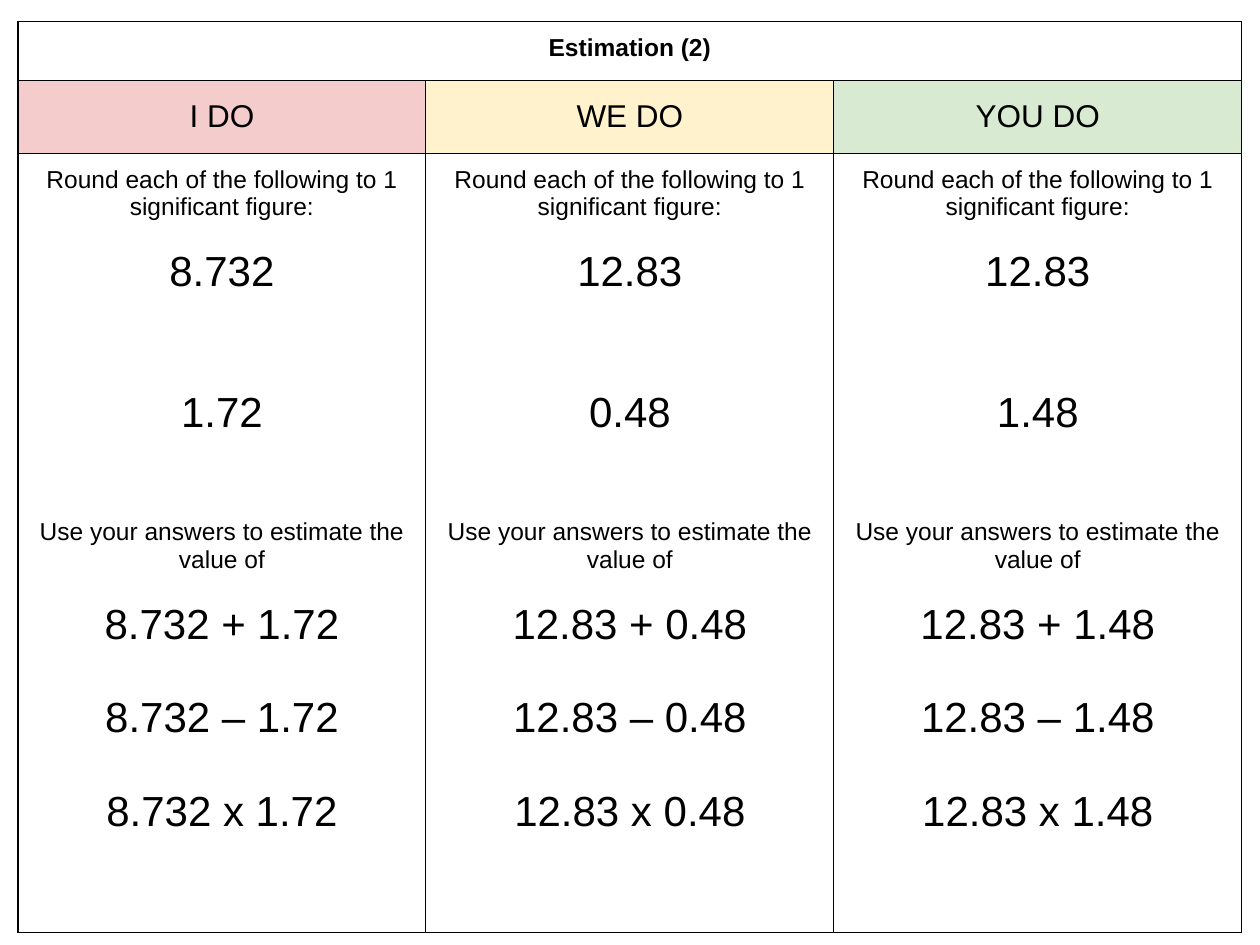
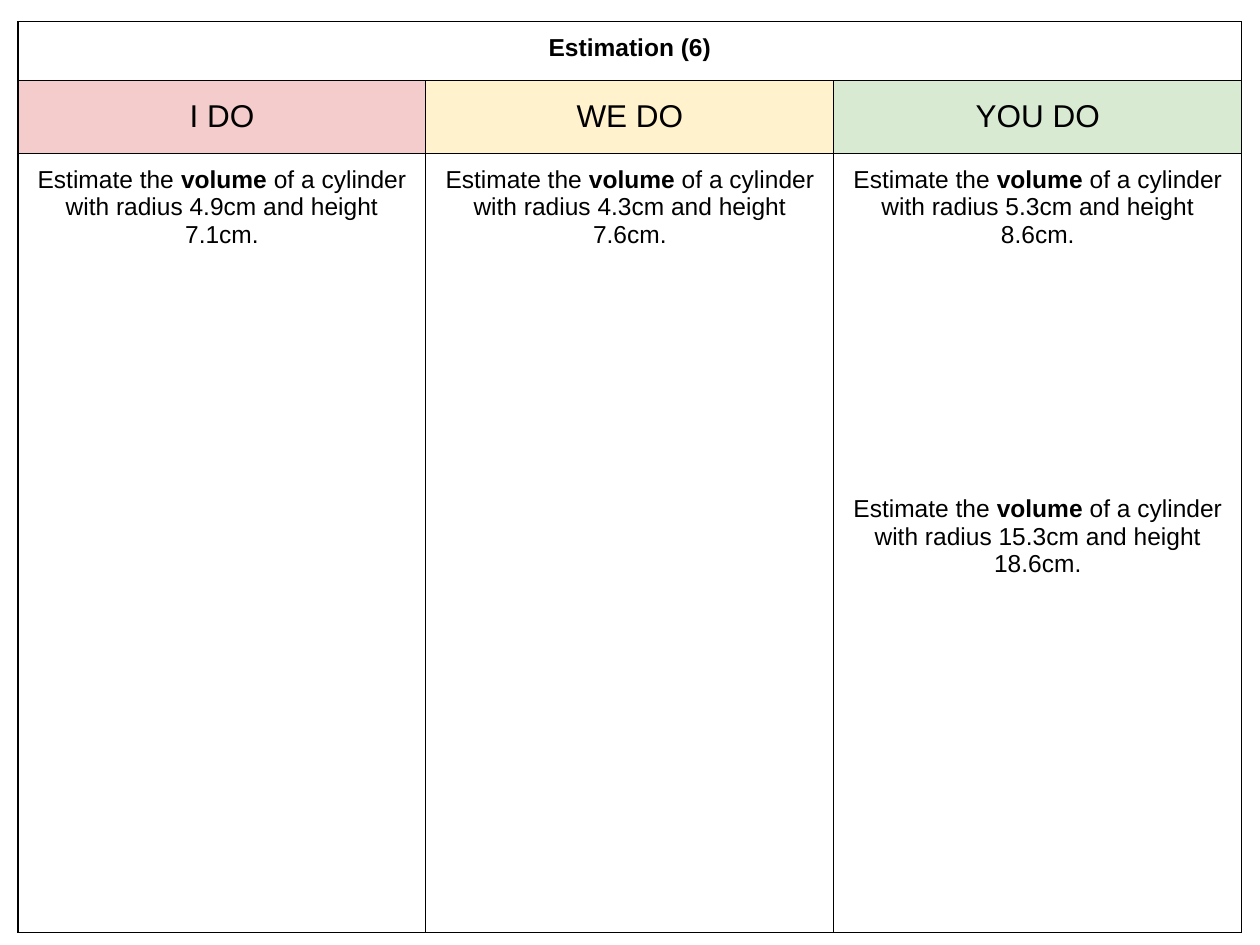
from dataclasses import dataclass

from lxml.etree import SubElement
from pptx import Presentation
from pptx.dml.color import RGBColor
from pptx.enum.text import MSO_ANCHOR, PP_ALIGN
from pptx.oxml.ns import qn
from pptx.presentation import Presentation as Deck
from pptx.table import _Cell
from pptx.util import Pt


@dataclass(frozen=True)
class Theme:
    font: str = "Arial"
    ink: str = "000000"
    small: int = 14
    heading: int = 18
    large: int = 24
    line_height: float = 1.12
    border: float = 0.75
    margin: float = 7.2


@dataclass(frozen=True)
class Stage:
    name: str
    color: str


@dataclass(frozen=True)
class Line:
    text: str
    size: int
    space_before: float = 0
    bold_word: str = ""


THEME = Theme()
STAGES = (
    Stage("I DO", "F4CCCC"),
    Stage("WE DO", "FFF2CC"),
    Stage("YOU DO", "D9EAD3"),
)
SLIDE_WIDTH, SLIDE_HEIGHT = 720, 540
GRID_LEFT, GRID_TOP = 10.3, 12.3
COLUMN_WIDTH = 233.1
ROW_HEIGHTS = (33.8, 41.6, 445)


def gap(lines: int, size: int) -> float:
    """Height of a number of text lines, used as working space."""
    return round(lines * size * THEME.line_height, 2)


def rounding_task(first: str, second: str) -> list[Line]:
    small, large = THEME.small, THEME.large
    sums = [
        Line(f"{first} {sign} {second}", large, space)
        for sign, space in (
            ("+", gap(1, small)),
            ("–", gap(1, large)),
            ("x", gap(1, large)),
        )
    ]
    return [
        Line("Round each of the following to 1 significant figure:", small),
        Line(first, large, gap(1, small)),
        Line(second, large, gap(2, large)),
        Line("Use your answers to estimate the value of", small, gap(3, small)),
        *sums,
    ]


def volume_task(*cylinders: tuple[str, str]) -> list[Line]:
    return [
        Line(
            f"Estimate the volume of a cylinder with radius {radius}cm and height {height}cm.",
            THEME.small,
            gap(9, THEME.small) if index else 0,
            bold_word="volume",
        )
        for index, (radius, height) in enumerate(cylinders)
    ]


def write(paragraph, text: str, *, size: int, bold: bool = False) -> None:
    run = paragraph.add_run()
    run.text = text
    run.font.name = THEME.font
    run.font.size = Pt(size)
    run.font.bold = bold
    run.font.color.rgb = RGBColor.from_string(THEME.ink)


def add_borders(cell: _Cell) -> None:
    properties = cell._tc.get_or_add_tcPr()
    for side in ("L", "R", "T", "B"):
        edge = SubElement(properties, qn(f"a:ln{side}"), w=str(Pt(THEME.border)))
        SubElement(SubElement(edge, qn("a:solidFill")), qn("a:srgbClr"), val=THEME.ink)


def fill_cell(
    cell: _Cell,
    lines: list[Line],
    *,
    color: str = "",
    bold: bool = False,
    anchor: MSO_ANCHOR = MSO_ANCHOR.TOP,
) -> None:
    if color:
        cell.fill.solid()
        cell.fill.fore_color.rgb = RGBColor.from_string(color)
    cell.vertical_anchor = anchor
    for index, line in enumerate(lines):
        frame = cell.text_frame
        paragraph = frame.add_paragraph() if index else frame.paragraphs[0]
        paragraph.alignment = PP_ALIGN.CENTER
        if line.space_before:
            paragraph.space_before = Pt(line.space_before)
        if line.bold_word:
            before, word, after = line.text.partition(line.bold_word)
            write(paragraph, before, size=line.size)
            write(paragraph, word, size=line.size, bold=True)
            write(paragraph, after, size=line.size)
        else:
            write(paragraph, line.text, size=line.size, bold=bold)


def add_lesson(deck: Deck, title: str, tasks: list[list[Line]]) -> None:
    slide = deck.slides.add_slide(deck.slide_layouts[6])
    grid = slide.shapes.add_table(
        len(ROW_HEIGHTS),
        len(STAGES),
        Pt(GRID_LEFT),
        Pt(GRID_TOP),
        Pt(COLUMN_WIDTH * len(STAGES)),
        Pt(sum(ROW_HEIGHTS)),
    ).table
    grid.first_row = grid.horz_banding = False
    for column in grid.columns:
        column.width = Pt(COLUMN_WIDTH)
    for row, height in zip(grid.rows, ROW_HEIGHTS):
        row.height = Pt(height)
    for cell in grid.iter_cells():
        add_borders(cell)
        cell.fill.background()
        cell.margin_left = cell.margin_right = Pt(THEME.margin)
        cell.margin_top = cell.margin_bottom = Pt(THEME.margin)

    grid.cell(0, 0).merge(grid.cell(0, len(STAGES) - 1))
    fill_cell(grid.cell(0, 0), [Line(title, THEME.small)], bold=True)
    for index, (stage, task) in enumerate(zip(STAGES, tasks)):
        fill_cell(
            grid.cell(1, index),
            [Line(stage.name, THEME.heading)],
            color=stage.color,
            anchor=MSO_ANCHOR.MIDDLE,
        )
        fill_cell(grid.cell(2, index), task)


def main() -> None:
    deck = Presentation()
    deck.slide_width, deck.slide_height = Pt(SLIDE_WIDTH), Pt(SLIDE_HEIGHT)
    add_lesson(
        deck,
        "Estimation (2)",
        [
            rounding_task("8.732", "1.72"),
            rounding_task("12.83", "0.48"),
            rounding_task("12.83", "1.48"),
        ],
    )
    add_lesson(
        deck,
        "Estimation (6)",
        [
            volume_task(("4.9", "7.1")),
            volume_task(("4.3", "7.6")),
            volume_task(("5.3", "8.6"), ("15.3", "18.6")),
        ],
    )
    deck.save("out.pptx")


if __name__ == "__main__":
    main()
